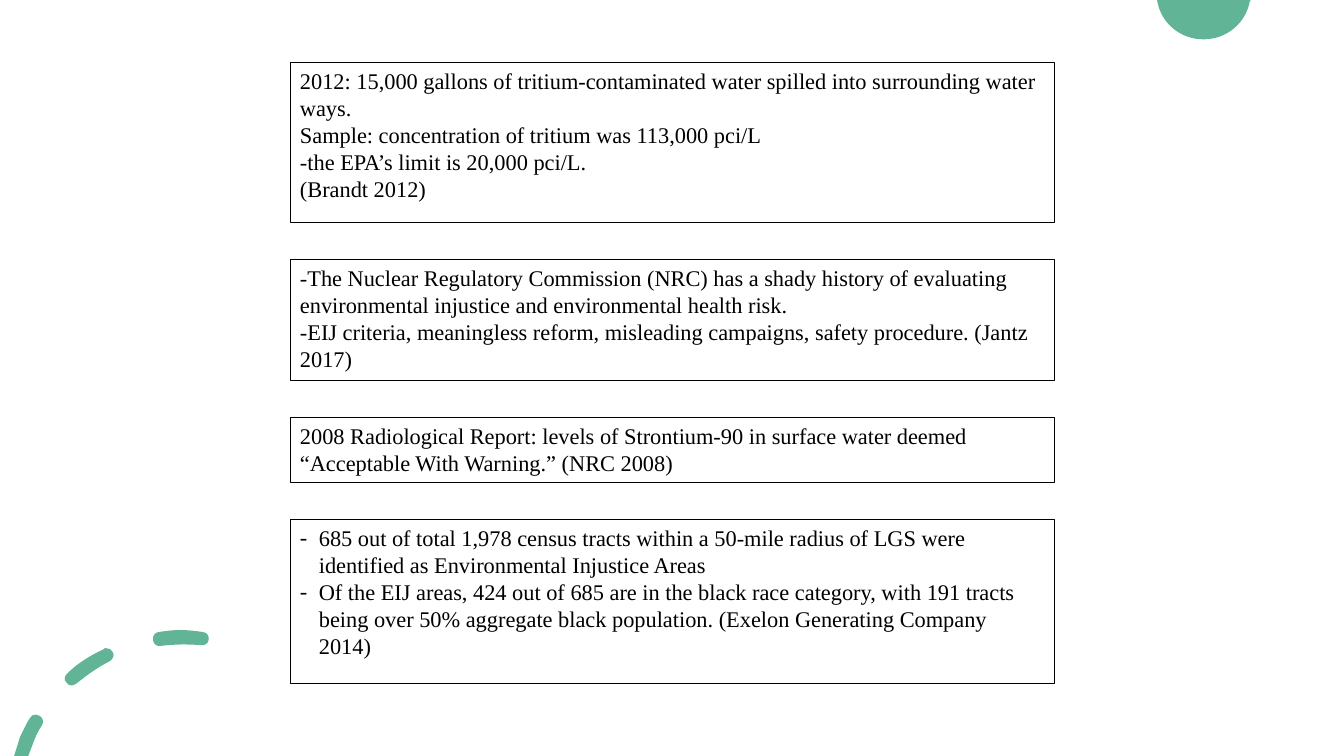
from lxml import etree
from pptx import Presentation
from pptx.dml.color import RGBColor
from pptx.enum.shapes import MSO_SHAPE
from pptx.enum.text import MSO_ANCHOR, PP_ALIGN
from pptx.oxml.ns import qn
from pptx.util import Pt

RECTANGLE = MSO_SHAPE.RECTANGLE
TOP = MSO_ANCHOR.TOP
LEFT = PP_ALIGN.LEFT

COLORS = {"green": "61B495", "white": "FFFFFF", "black": "000000"}
FONT = "Times New Roman"

# Fact boxes, stacked in one column: height, bulleted, lines
BOX_LEFT, BOX_TOP, BOX_WIDTH, BOX_GAP = 207.2, 44.6, 546, 26.2
FACTS = [
    (114.4, False, [
        "2012: 15,000 gallons of tritium-contaminated water spilled into surrounding water ways.",
        "Sample: concentration of tritium was 113,000 pci/L",
        "-the EPA’s limit is 20,000 pci/L.",
        "(Brandt 2012)",
    ]),
    (86.4, False, [
        "-The Nuclear Regulatory Commission (NRC) has a shady history of evaluating "
        "environmental injustice and environmental health risk.",
        "-EIJ criteria, meaningless reform, misleading campaigns, safety procedure. (Jantz 2017)",
    ]),
    (47, False, [
        "2008 Radiological Report: levels of Strontium-90 in surface water deemed "
        "“Acceptable With Warning.” (NRC 2008)",
    ]),
    (117.2, True, [
        "685 out of total 1,978 census tracts within a 50-mile radius of LGS were "
        "identified as Environmental Injustice Areas",
        "Of the EIJ areas, 424 out of 685 are in the black race category, with 191 tracts "
        "being over 50% aggregate black population. (Exelon Generating Company 2014)",
    ]),
]

# Outlines: a start point, then lines (x, y) or cubic curves (two controls, end)
CORNER_DISC = [[
    (826.6, 0), (893.5, 0), (892.8, 0.7),
    (889.9, 16.6, 876.2, 28.1, 859.7, 28.1),
    (843.1, 28.1, 829.4, 16.6, 826.6, 0.7),
]]
DASHED_ARC = [
    [
        (25.9, 510.5),
        (24.5, 509.8, 22.3, 511.2, 21.6, 512.6),
        (18.7, 517, 16.6, 522, 14.4, 526.3),
        (10.1, 540), (20.2, 540), (23.8, 530.6),
        (25.2, 526.3, 27.4, 522, 30.2, 517.7),
        (31.7, 515.5, 30.2, 511.9, 28.1, 511.2),
        (27.4, 510.5, 26.6, 510.5, 25.9, 510.5),
    ],
    [
        (75.6, 463),
        (74.9, 463, 74.2, 463, 74.2, 463.7),
        (64.8, 468, 55.4, 473.8, 48.2, 481),
        (46.1, 482.4, 45.4, 486, 47.5, 487.4),
        (48.2, 488.9, 49.7, 489.6, 51.1, 489.6),
        (52.6, 489.6, 53.3, 488.9, 54.7, 488.2),
        (61.9, 482.4, 69.8, 476.6, 78.5, 472.3),
        (80.6, 470.9, 82.1, 468, 80.6, 465.8),
        (79.9, 463.7, 77.8, 463, 75.6, 463),
    ],
    [
        (128.9, 450),
        (123.8, 450, 118.8, 450.7, 113.8, 451.4),
        (110.9, 451.4, 108.7, 454.3, 109.4, 457.2),
        (109.4, 459.4, 111.6, 461.5, 113.8, 461.5),
        (124.6, 460.1, 133.9, 460.1, 143.3, 460.8),
        (146.2, 461.5, 149, 459.4, 149, 457.2),
        (149.8, 454.3, 147.6, 451.4, 144.7, 451.4),
        (139.7, 450.7, 133.9, 450, 128.9, 450),
    ],
]


def rgb(name):
    return RGBColor.from_string(COLORS[name])


def segment_points(segment):
    return [(Pt(x), Pt(y)) for x, y in zip(segment[::2], segment[1::2])]


def bend_curves(outline, contours):
    """Join the three straight steps of each curve into one cubic segment."""
    steps = iter(list(outline._element.iter(qn("a:lnTo"))))
    for contour in contours:
        for segment in contour[1:]:
            group = [next(steps) for _ in segment[::2]]
            if len(group) == 3:
                curve = etree.Element(qn("a:cubicBezTo"))
                group[0].addprevious(curve)
                for step in group:
                    curve.append(step[0])
                    step.getparent().remove(step)


def add_decoration(slide, contours, color):
    builder = slide.shapes.build_freeform(*segment_points(contours[0][0])[0])
    for index, (start, *segments) in enumerate(contours):
        if index:
            builder.move_to(*segment_points(start)[0])
        points = [point for segment in segments for point in segment_points(segment)]
        builder.add_line_segments(points, close=True)
    decoration = builder.convert_to_shape()
    bend_curves(decoration, contours)
    decoration.shadow.inherit = False
    decoration.fill.solid()
    decoration.fill.fore_color.rgb = rgb(color)
    decoration.line.fill.background()


def add_dash_bullet(paragraph, indent):
    properties = paragraph._p.get_or_add_pPr()
    properties.set("marL", str(Pt(indent)))
    properties.set("indent", str(-Pt(indent)))
    etree.SubElement(properties, qn("a:buFont")).set("typeface", FONT)
    etree.SubElement(properties, qn("a:buChar")).set("char", "-")


def write_text(frame, lines, size=16, color="black", bulleted=False, indent=13.5):
    frame.word_wrap = True
    frame.vertical_anchor = TOP
    for index, line in enumerate(lines):
        paragraph = frame.add_paragraph() if index else frame.paragraphs[0]
        paragraph.alignment = LEFT
        if bulleted:
            add_dash_bullet(paragraph, indent)
        run = paragraph.add_run()
        run.text = line
        run.font.name = FONT
        run.font.size = Pt(size)
        run.font.color.rgb = rgb(color)


def add_fact_box(slide, top, height, lines, bulleted):
    box = slide.shapes.add_shape(
        RECTANGLE, Pt(BOX_LEFT), Pt(top), Pt(BOX_WIDTH), Pt(height))
    box.shadow.inherit = False
    box.fill.solid()
    box.fill.fore_color.rgb = rgb("white")
    box.line.color.rgb = rgb("black")
    box.line.width = Pt(0.5)
    write_text(box.text_frame, lines, bulleted=bulleted)


def main():
    presentation = Presentation()
    presentation.slide_width, presentation.slide_height = Pt(960), Pt(540)
    slide = presentation.slides.add_slide(presentation.slide_layouts[6])

    # Corner decorations
    add_decoration(slide, CORNER_DISC, "green")
    add_decoration(slide, DASHED_ARC, "green")

    # Facts from top to bottom
    top = BOX_TOP
    for height, bulleted, lines in FACTS:
        add_fact_box(slide, top, height, lines, bulleted)
        top += height + BOX_GAP

    presentation.save("out.pptx")


if __name__ == "__main__":
    main()
